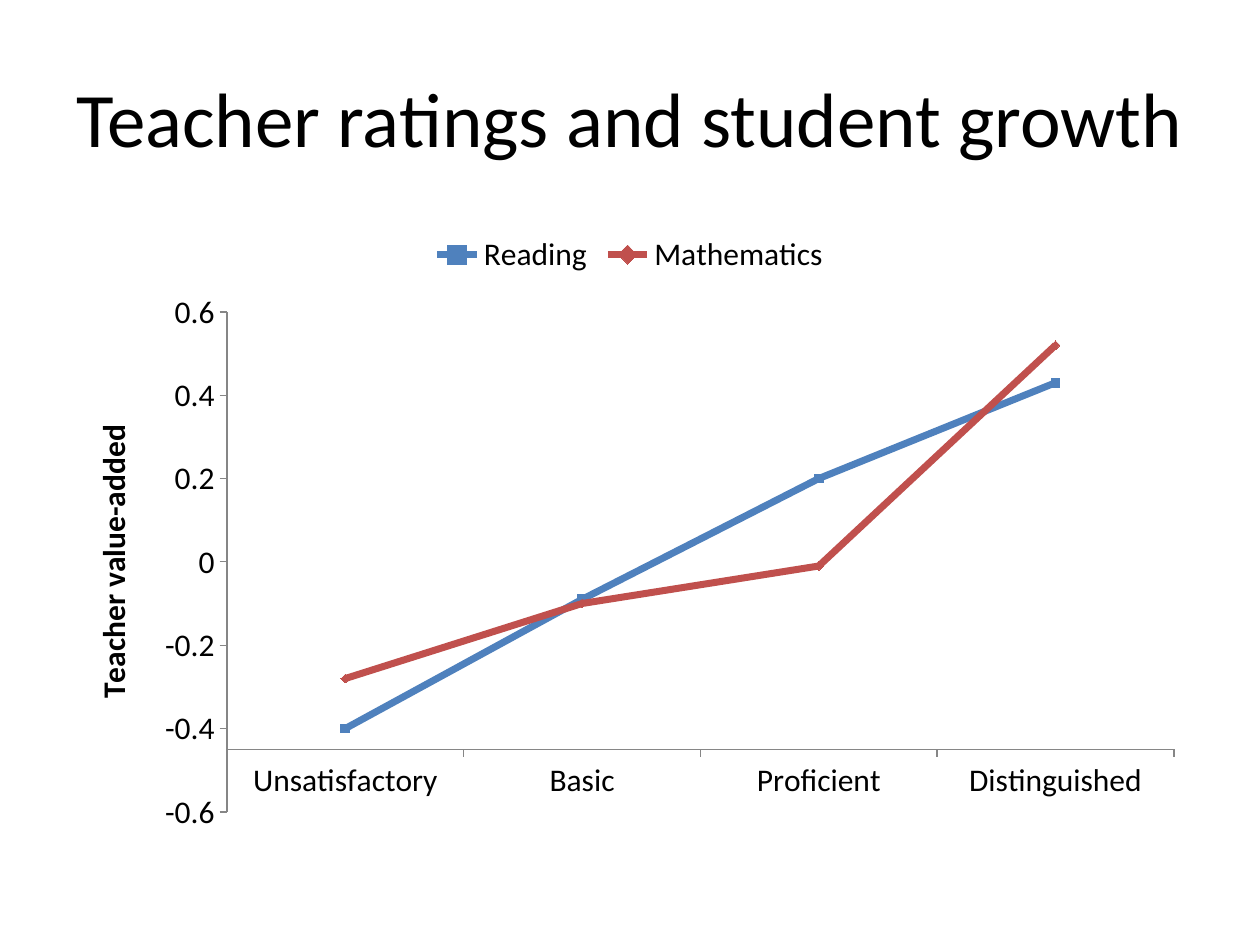
from dataclasses import dataclass

from lxml.etree import SubElement
from pptx import Presentation
from pptx.chart.axis import _BaseAxis
from pptx.chart.chart import Chart
from pptx.chart.data import CategoryChartData
from pptx.chart.series import LineSeries
from pptx.dml.color import RGBColor
from pptx.enum.chart import (XL_CHART_TYPE, XL_LEGEND_POSITION,
                             XL_MARKER_STYLE, XL_TICK_MARK)
from pptx.enum.text import MSO_ANCHOR, PP_ALIGN
from pptx.oxml.ns import qn
from pptx.util import Emu, Pt

SCALE = 914400 / 126
FONT = "Calibri"
COLORS = {"text": "000000", "axis": "868686",
          "blue": "4F81BD", "red": "C0504D"}
LEVELS = ("Unsatisfactory", "Basic", "Proficient", "Distinguished")
STEP = 0.2


@dataclass
class Box:
    left: int
    top: int
    width: int
    height: int

    def emu(self) -> list[Emu]:
        return [px(n) for n in (self.left, self.top, self.width, self.height)]


@dataclass
class Subject:
    name: str
    vals: tuple[float, ...]
    color: str
    mark: XL_MARKER_STYLE


SUBJECTS = (
    Subject("Reading", (-0.4, -0.09, 0.2, 0.43), "blue",
            XL_MARKER_STYLE.SQUARE),
    Subject("Mathematics", (-0.28, -0.1, -0.01, 0.52), "red",
            XL_MARKER_STYLE.DIAMOND),
)
TITLE = Box(63, 38, 1134, 158)
CHART = Box(63, 220, 1134, 624)
PLOT = Box(227, 312, 947, 500)


def px(n: int) -> Emu:
    return Emu(round(n * SCALE))


def rgb(name: str) -> RGBColor:
    return RGBColor.from_string(COLORS[name])


def style(font, size: int, bold: bool = False) -> None:
    font.name, font.size, font.bold = FONT, Pt(size), bold
    font.color.rgb = rgb("text")


def add_title(slide, box: Box, text: str) -> None:
    frame = slide.shapes.add_textbox(*box.emu()).text_frame
    frame.word_wrap = True
    frame.margin_left = frame.margin_right = 0
    frame.vertical_anchor = MSO_ANCHOR.MIDDLE
    para = frame.paragraphs[0]
    para.text = text
    para.alignment = PP_ALIGN.CENTER
    style(para.font, 44)


def set_axis(axis: _BaseAxis) -> None:
    axis.has_major_gridlines = False
    axis.major_tick_mark = XL_TICK_MARK.OUTSIDE
    axis.minor_tick_mark = XL_TICK_MARK.NONE
    axis.format.line.color.rgb = rgb("axis")
    axis.format.line.width = Pt(0.75)


def set_line(line: LineSeries, subject: Subject) -> None:
    line.smooth = False
    line.format.line.color.rgb = rgb(subject.color)
    line.format.line.width = Pt(4)
    marker = line.marker
    marker.style, marker.size = subject.mark, 5
    marker.format.fill.solid()
    marker.format.fill.fore_color.rgb = rgb(subject.color)
    marker.format.line.color.rgb = rgb(subject.color)


def place_plot(chart: Chart, area: Box, plot: Box) -> None:
    """Fix the inner plot area as fractions of the chart."""
    parent = chart.plots[0]._element.getparent()
    for old in parent.findall(qn("c:layout")):
        parent.remove(old)
    layout = SubElement(parent, qn("c:layout"))
    parent.insert(0, layout)
    manual = SubElement(layout, qn("c:manualLayout"))
    rules = {
        "layoutTarget": "inner", "xMode": "edge", "yMode": "edge",
        "x": (plot.left - area.left) / area.width,
        "y": (plot.top - area.top) / area.height,
        "w": plot.width / area.width, "h": plot.height / area.height,
    }
    for tag, val in rules.items():
        SubElement(manual, qn(f"c:{tag}")).set("val", str(val))


def add_graph(slide, box: Box) -> None:
    data = CategoryChartData()
    data.categories = LEVELS
    for subject in SUBJECTS:
        data.add_series(subject.name, subject.vals)
    chart = slide.shapes.add_chart(
        XL_CHART_TYPE.LINE_MARKERS, *box.emu(), data).chart
    style(chart.font, 18)
    chart.has_title = False
    chart.plots[0].vary_by_categories = False
    for line, subject in zip(chart.plots[0].series, SUBJECTS):
        set_line(line, subject)

    # Legend
    chart.has_legend = True
    chart.legend.position = XL_LEGEND_POSITION.TOP
    chart.legend.include_in_layout = False
    style(chart.legend.font, 18)

    # Axes: whole steps from the minimum land exactly on zero
    for axis in (chart.category_axis, chart.value_axis):
        set_axis(axis)
    scale = chart.value_axis
    scale.minimum_scale, scale.maximum_scale = -3 * STEP, 3 * STEP
    scale.major_unit = STEP
    scale.crosses_at = -0.45
    scale.tick_labels.number_format = "0.0;-0.0;0"
    scale.tick_labels.number_format_is_linked = False
    para = scale.axis_title.text_frame.paragraphs[0]
    para.text = "Teacher value-added"
    style(para.font, 18, bold=True)
    place_plot(chart, box, PLOT)


def main() -> None:
    deck = Presentation()
    deck.slide_width, deck.slide_height = px(1260), px(945)
    slide = deck.slides.add_slide(deck.slide_layouts[6])
    add_title(slide, TITLE, "Teacher ratings and student growth")
    add_graph(slide, CHART)
    deck.save("out.pptx")


if __name__ == "__main__":
    main()
